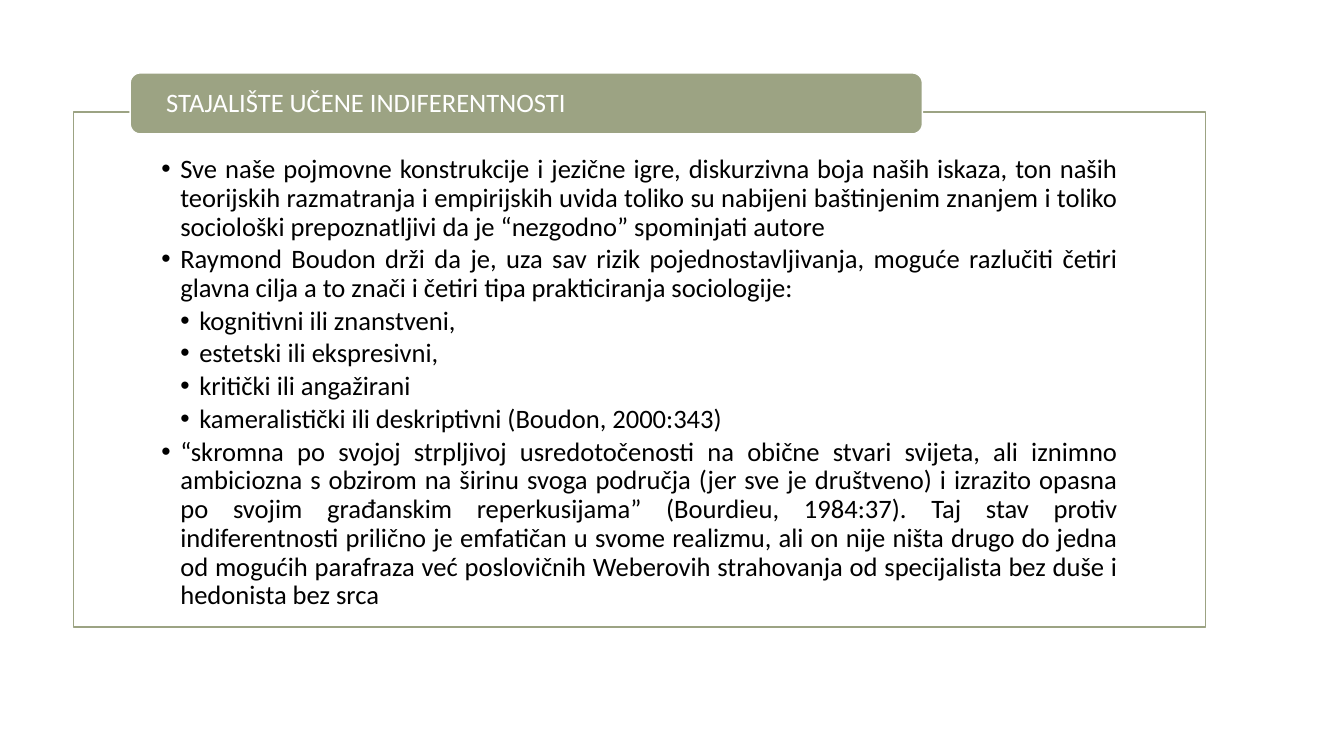
from dataclasses import dataclass

from lxml import etree
from pptx import Presentation
from pptx.dml.color import RGBColor
from pptx.enum.shapes import MSO_SHAPE
from pptx.enum.text import MSO_ANCHOR, PP_ALIGN
from pptx.oxml.ns import qn
from pptx.util import Pt

RECTANGLE = MSO_SHAPE.RECTANGLE
ROUNDED = MSO_SHAPE.ROUNDED_RECTANGLE
TOP = MSO_ANCHOR.TOP
MIDDLE = MSO_ANCHOR.MIDDLE
LEFT = PP_ALIGN.LEFT
JUSTIFY = PP_ALIGN.JUSTIFY

SAGE = "9CA383"
WHITE = "FFFFFF"
BLACK = "000000"
FONT_NAME = "Calibri"
FONT_SIZE = 19
BULLET_INDENT = 13.5
BULLET_GAP = 2.85


@dataclass
class Panel:
    kind: MSO_SHAPE
    left: float
    top: float
    width: float
    height: float
    fill: str
    line: str
    anchor: MSO_ANCHOR
    side_inset: float
    top_inset: float
    bottom_inset: float


@dataclass
class Line:
    text: str
    level: int = 0


CONTENT_PANEL = Panel(RECTANGLE, 52.6, 80.1, 808.4, 367.9, WHITE, SAGE, TOP, 62.7, 31, 11)
TITLE_PANEL = Panel(ROUNDED, 93, 52.1, 565.9, 43.6, SAGE, WHITE, MIDDLE, 23.6, 0, 0)

TITLE = Line("STAJALIŠTE UČENE INDIFERENTNOSTI")
POINTS = [
    Line("Sve naše pojmovne konstrukcije i jezične igre, diskurzivna boja naših iskaza, "
         "ton naših teorijskih razmatranja i empirijskih uvida toliko su nabijeni "
         "baštinjenim znanjem i toliko sociološki prepoznatljivi da je “nezgodno” "
         "spominjati autore"),
    Line("Raymond Boudon drži da je, uza sav rizik pojednostavljivanja, moguće razlučiti "
         "četiri glavna cilja a to znači i četiri tipa prakticiranja sociologije:"),
    Line("kognitivni ili znanstveni,", 1),
    Line("estetski ili ekspresivni,", 1),
    Line("kritički ili angažirani", 1),
    Line("kameralistički ili deskriptivni (Boudon, 2000:343)", 1),
    Line("“skromna po svojoj strpljivoj usredotočenosti na obične stvari svijeta, ali "
         "iznimno ambiciozna s obzirom na širinu svoga područja (jer sve je društveno) i "
         "izrazito opasna po svojim građanskim reperkusijama” (Bourdieu, 1984:37). Taj "
         "stav protiv indiferentnosti prilično je emfatičan u svome realizmu, ali on nije "
         "ništa drugo do jedna od mogućih parafraza već poslovičnih Weberovih strahovanja "
         "od specijalista bez duše i hedonista bez srca"),
]


def color(value: str) -> RGBColor:
    return RGBColor.from_string(value)


def draw_panel(slide, panel: Panel):
    shape = slide.shapes.add_shape(
        panel.kind, Pt(panel.left), Pt(panel.top), Pt(panel.width), Pt(panel.height))
    shape.shadow.inherit = False
    shape.fill.solid()
    shape.fill.fore_color.rgb = color(panel.fill)
    shape.line.color.rgb = color(panel.line)
    shape.line.width = Pt(1)
    frame = shape.text_frame
    frame.word_wrap = True
    frame.vertical_anchor = panel.anchor
    frame.margin_left = frame.margin_right = Pt(panel.side_inset)
    frame.margin_top = Pt(panel.top_inset)
    frame.margin_bottom = Pt(panel.bottom_inset)
    return frame


def add_bullet(paragraph, level: int) -> None:
    paragraph.level = level
    properties = paragraph._p.get_or_add_pPr()
    properties.set("marL", str(Pt(BULLET_INDENT * (level + 1))))
    properties.set("indent", str(-Pt(BULLET_INDENT)))
    etree.SubElement(properties, qn("a:buFont")).set("typeface", "Arial")
    etree.SubElement(properties, qn("a:buChar")).set("char", "•")


def write_lines(frame, lines: list[Line], text_color: str, alignment: PP_ALIGN,
                bulleted: bool) -> None:
    for index, line in enumerate(lines):
        paragraph = frame.add_paragraph() if index else frame.paragraphs[0]
        paragraph.text = line.text
        paragraph.alignment = alignment
        paragraph.line_spacing = 0.9
        if bulleted:
            paragraph.space_after = Pt(BULLET_GAP)
            add_bullet(paragraph, line.level)
        paragraph.font.name = FONT_NAME
        paragraph.font.size = Pt(FONT_SIZE)
        paragraph.font.color.rgb = color(text_color)


def main() -> None:
    presentation = Presentation()
    presentation.slide_width = Pt(960)
    presentation.slide_height = Pt(540)
    slide = presentation.slides.add_slide(presentation.slide_layouts[6])
    write_lines(draw_panel(slide, CONTENT_PANEL), POINTS, BLACK, JUSTIFY, True)
    write_lines(draw_panel(slide, TITLE_PANEL), [TITLE], WHITE, LEFT, False)
    presentation.save("out.pptx")


if __name__ == "__main__":
    main()
